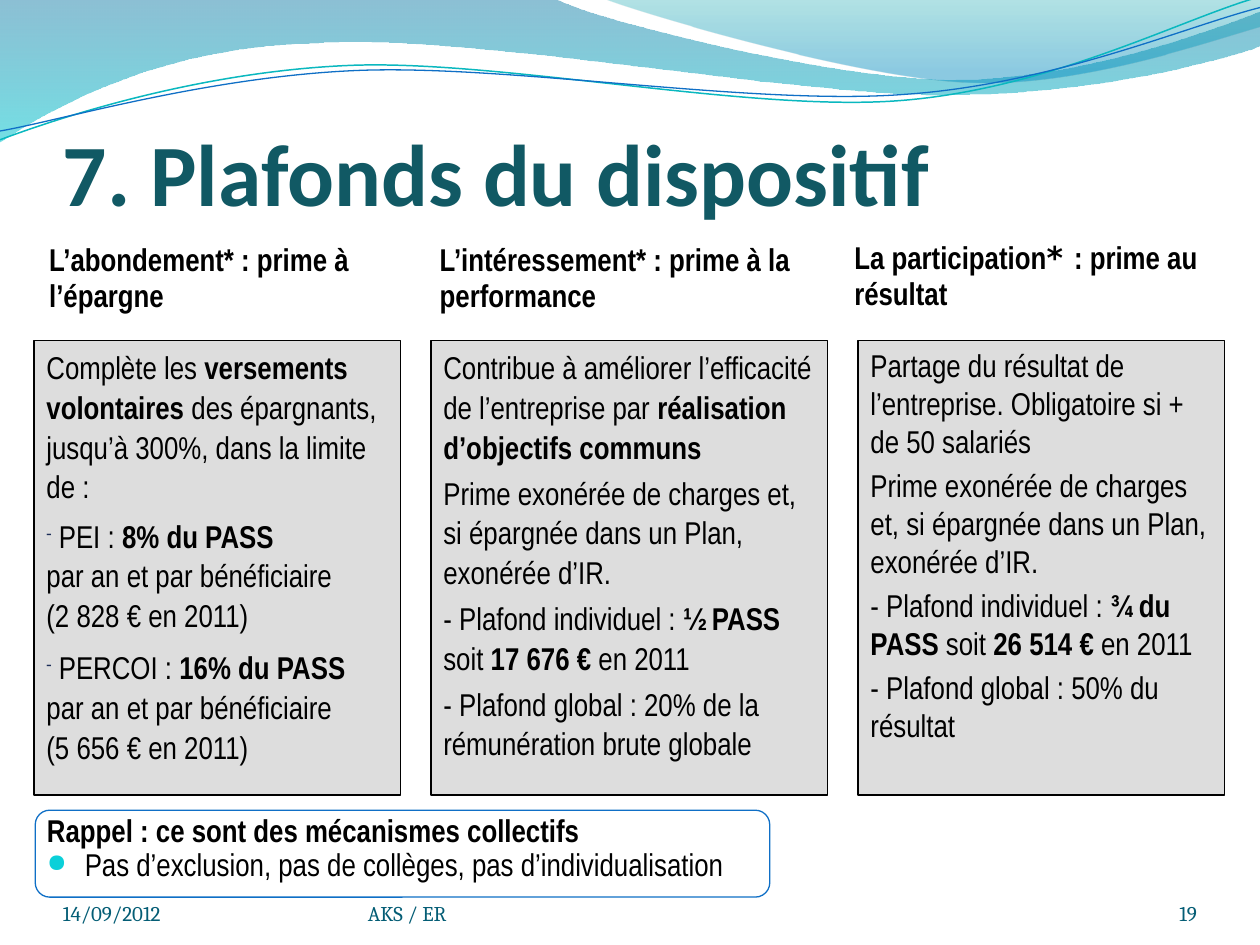
from lxml import etree
from pptx import Presentation
from pptx.dml.color import RGBColor
from pptx.enum import shapes, text
from pptx.oxml import ns
from pptx.util import Inches, Pt

COLORS = {
    "title": "115964", "text": "000000", "panel": "DDDDDD", "footer": "045D75",
    "blue": "0F6FC6", "teal": "0AB8BF", "dash": "1D2E58", "dot": "0BD0D9",
}
BODY, BODY_SIZE = "Arial Narrow", 18

# Waves: start point, then segments of 1 point (line) or 3 points (Bézier curve)
BANDS = [
    ((0, 0), [
        [(4.4, -0.01)],
        [(4.76, 0.17), (6.64, 0.63), (7.58, 0.63)],
        [(8.53, 0.63), (9.58, 0.26), (10, 0.09)],
        [(10.01, 0.36)],
        [(9.83, 0.44), (8.7, 0.76), (7.46, 0.75)],
        [(6.22, 0.75), (3.82, 0.28), (2.57, 0.34)],
        [(1.29, 0.36), (0.46, 0.83), (-0.01, 1.13)],
    ], [(0, "0074A1", 45), (100, "00C6CF", 55)]),
    ((4.79, -0.01), [
        [(5.09, 0.11), (6.82, 0.62), (7.69, 0.65)],
        [(8.56, 0.69), (9.61, 0.32), (10, 0.21)],
        [(10, 0)],
    ], [(0, "00A1A9", 30), (80, "008BBF", 45)]),
]
STRANDS = [
    ((0, 1.11), [
        [(0.48, 0.93), (1.58, 0.57), (2.77, 0.52)],
        [(3.95, 0.47), (5.93, 0.89), (7.13, 0.8)],
        [(8.33, 0.71), (9.38, 0.15), (9.98, -0.02)],
    ], "teal", 0.85),
    ((0, 1.04), [
        [(0.47, 0.96), (1.64, 0.61), (2.83, 0.56)],
        [(4.03, 0.51), (5.97, 0.84), (7.17, 0.75)],
        [(8.36, 0.67), (9.41, 0.21), (10, 0.06)],
    ], "blue", 0.75),
]

TITLE = "7. Plafonds du dispositif"
EXEMPTION = "Prime exonérée de charges et, si épargnée dans un Plan, exonérée d’IR."
# Paragraphs: (space before as a share of the text size, dash bullet, text with **bold**)
COLUMNS = [
    {"head": [("L’abondement* : prime à l’épargne", BODY)],
     "head_box": (0.32, 1.8, 2.84, 0.83), "left": 0.27, "width": 2.91, "spacing": 1.05,
     "body": [
         (0.2, False, "Complète les **versements volontaires** des épargnants, "
                      "jusqu’à 300%, dans la limite de :"),
         (0.3, True, " PEI : **8% du PASS**\npar an et par bénéficiaire"),
         (0, False, "(2 828 € en 2011)"),
         (0.4, True, " PERCOI : **16% du PASS**\npar an et par bénéficiaire\n(5 656 € en 2011)"),
     ]},
    {"head": [("L’intéressement* : prime à la performance", BODY)],
     "head_box": (3.42, 1.8, 3.23, 0.83), "left": 3.42, "width": 3.15, "spacing": 1.05,
     "body": [
         (0.2, False, "Contribue à améliorer l’efficacité de l’entreprise par "
                      "**réalisation d’objectifs communs**"),
         (0.2, False, EXEMPTION),
         (0.2, False, "- Plafond individuel : **½ PASS** soit **17 676 €** en 2011"),
         (0.2, False, "- Plafond global : 20% de la rémunération brute globale"),
     ]},
    {"head": [("La participation", BODY), ("* ", "DejaVu Sans"), (": prime au résultat", BODY)],
     "head_box": (6.71, 1.78, 2.99, 0.83), "left": 6.81, "width": 2.91, "spacing": 1.0,
     "body": [
         (0.2, False, "Partage du résultat de l’entreprise. Obligatoire si + de 50 salariés"),
         (0.2, False, EXEMPTION),
         (0.2, False, "- Plafond individuel : **¾ du PASS** soit **26 514 €** en 2011"),
         (0.2, False, "- Plafond global : 50% du résultat"),
     ]},
]
REMINDER = ["**Rappel : ce sont des mécanismes collectifs**",
            "Pas d’exclusion, pas de collèges, pas d’individualisation"]
FOOTERS = [
    ("14/09/2012", 0.5, 2.33, text.PP_ALIGN.LEFT),
    ("AKS / ER", 2.92, 3.67, text.PP_ALIGN.LEFT),
    ("19", 8.67, 0.83, text.PP_ALIGN.RIGHT),
]


def rgb(name):
    return RGBColor.from_string(COLORS[name])


def child(parent, tag, **attributes):
    return etree.SubElement(parent, ns.qn(tag), attributes)


def outline(shape, color, width):
    shape.line.color.rgb = rgb(color)
    shape.line.width = Pt(width)


def wave(slide, start, segments, close):
    """Draw an outline, then turn each run of three points into a Bézier curve."""
    points = [(Inches(x), Inches(y)) for x, y in [start, *sum(segments, [])]]
    builder = slide.shapes.build_freeform(*points[0])
    builder.add_line_segments(points[1:], close=close)
    shape = builder.convert_to_shape()
    shape.shadow.inherit = False
    lines = iter(shape._element.findall(".//" + ns.qn("a:lnTo")))
    for segment in segments:
        steps = [next(lines) for _ in segment]
        if len(steps) == 3:
            curve = etree.Element(ns.qn("a:cubicBezTo"))
            steps[0].addprevious(curve)
            for step in steps:
                curve.append(step[0])
                step.getparent().remove(step)
    return shape


def fade(shape, stops):
    """Fill from top to bottom with partly transparent colours."""
    shape.fill.gradient()
    shape.fill.gradient_angle = 270
    stop_list = shape._element.spPr.find(".//" + ns.qn("a:gsLst"))
    for old in list(stop_list):
        stop_list.remove(old)
    for position, color, opacity in stops:
        stop = child(stop_list, "a:gs", pos=str(position * 1000))
        child(child(stop, "a:srgbClr", val=color), "a:alpha", val=str(opacity * 1000))


def frame(shape, insets, anchor):
    box = shape.text_frame
    box.word_wrap = True
    box.vertical_anchor = anchor
    box.margin_left, box.margin_top, box.margin_right, box.margin_bottom = map(Inches, insets)
    return box


def text_box(slide, box, insets, anchor):
    return frame(slide.shapes.add_textbox(*map(Inches, box)), insets, anchor)


def panel(slide, kind, box, insets, line):
    shape = slide.shapes.add_shape(kind, *map(Inches, box))
    shape.shadow.inherit = False
    outline(shape, line, 0.75)
    return shape, frame(shape, insets, text.MSO_ANCHOR.TOP)


def style(paragraph, font=BODY, size=BODY_SIZE, color="text", bold=None,
          align=text.PP_ALIGN.LEFT):
    paragraph.alignment = align
    paragraph.font.name, paragraph.font.size = font, Pt(size)
    paragraph.font.bold = bold
    paragraph.font.color.rgb = rgb(color)


def write(paragraph, marked):
    """Add text in which ** switches bold and a newline breaks the line."""
    for index, part in enumerate(marked.split("**")):
        for number, line in enumerate(part.split("\n")):
            if number:
                paragraph.add_line_break()
            if line:
                run = paragraph.add_run()
                run.text = line
                run.font.bold = index % 2 == 1


def bullet(paragraph, char, color, percent):
    properties = paragraph._p.get_or_add_pPr()
    marks = [etree.Element(ns.qn(tag)) for tag in ("a:buClr", "a:buSzPct", "a:buChar")]
    child(marks[0], "a:srgbClr", val=COLORS[color])
    marks[1].set("val", str(percent * 1000))
    marks[2].set("char", char)
    place = properties.index(properties.find(ns.qn("a:defRPr")))
    properties[place:place] = marks


def paragraphs(box, items):
    """Pair each item with its own paragraph of the text frame."""
    for index, item in enumerate(items):
        yield (box.add_paragraph() if index else box.paragraphs[0]), item


def main():
    deck = Presentation()
    deck.slide_width, deck.slide_height = Inches(10), Inches(7.5)
    slide = deck.slides.add_slide(deck.slide_layouts[6])

    for start, segments, stops in BANDS:
        band = wave(slide, start, segments, True)
        fade(band, stops)
        band.line.fill.background()
    for start, segments, color, width in STRANDS:
        strand = wave(slide, start, segments, False)
        strand.fill.background()
        outline(strand, color, width)

    title = text_box(slide, (0.5, 0.77, 9, 1.01), (0, 0.05, 0, 0), text.MSO_ANCHOR.BOTTOM)
    title.text = TITLE
    style(title.paragraphs[0], "Calibri", 50, "title", True)

    reminder, reminder_text = panel(slide, shapes.MSO_SHAPE.ROUNDED_RECTANGLE,
                                    (0.28, 6.43, 5.83, 0.69), (0.06, 0.01, 0.06, 0.01), "blue")
    reminder.fill.background()
    for paragraph, sentence in paragraphs(reminder_text, REMINDER):
        write(paragraph, sentence)
        style(paragraph)
        paragraph.line_spacing = 0.9
        indent = Inches(0.3)
        paragraph._p.pPr.set("marL", str(indent))
        paragraph._p.pPr.set("indent", str(-indent))
    bullet(reminder_text.paragraphs[-1], "●", "dot", 80)

    for column in COLUMNS:
        head = text_box(slide, column["head_box"], (0.07, 0.04, 0.07, 0.04),
                        text.MSO_ANCHOR.MIDDLE).paragraphs[0]
        style(head, bold=True)
        head.line_spacing = 0.95
        for words, font in column["head"]:
            run = head.add_run()
            run.text, run.font.name = words, font

        card, body = panel(slide, shapes.MSO_SHAPE.RECTANGLE,
                           (column["left"], 2.7, column["width"], 3.61),
                           (0.1, 0.05, 0.1, 0.05), "text")
        card.fill.solid()
        card.fill.fore_color.rgb = rgb("panel")
        for paragraph, (before, dashed, words) in paragraphs(body, column["body"]):
            write(paragraph, words)
            style(paragraph)
            paragraph.line_spacing = column["spacing"]
            paragraph.space_before = Pt(before * BODY_SIZE)
            if dashed:
                bullet(paragraph, "-", "dash", 50)

    for words, left, width, align in FOOTERS:
        footer = text_box(slide, (left, 6.95, width, 0.4), (0, 0, 0, 0), text.MSO_ANCHOR.BOTTOM)
        footer.text = words
        style(footer.paragraphs[0], "Cambria", 12, "footer", align=align)

    deck.save("out.pptx")


if __name__ == "__main__":
    main()
